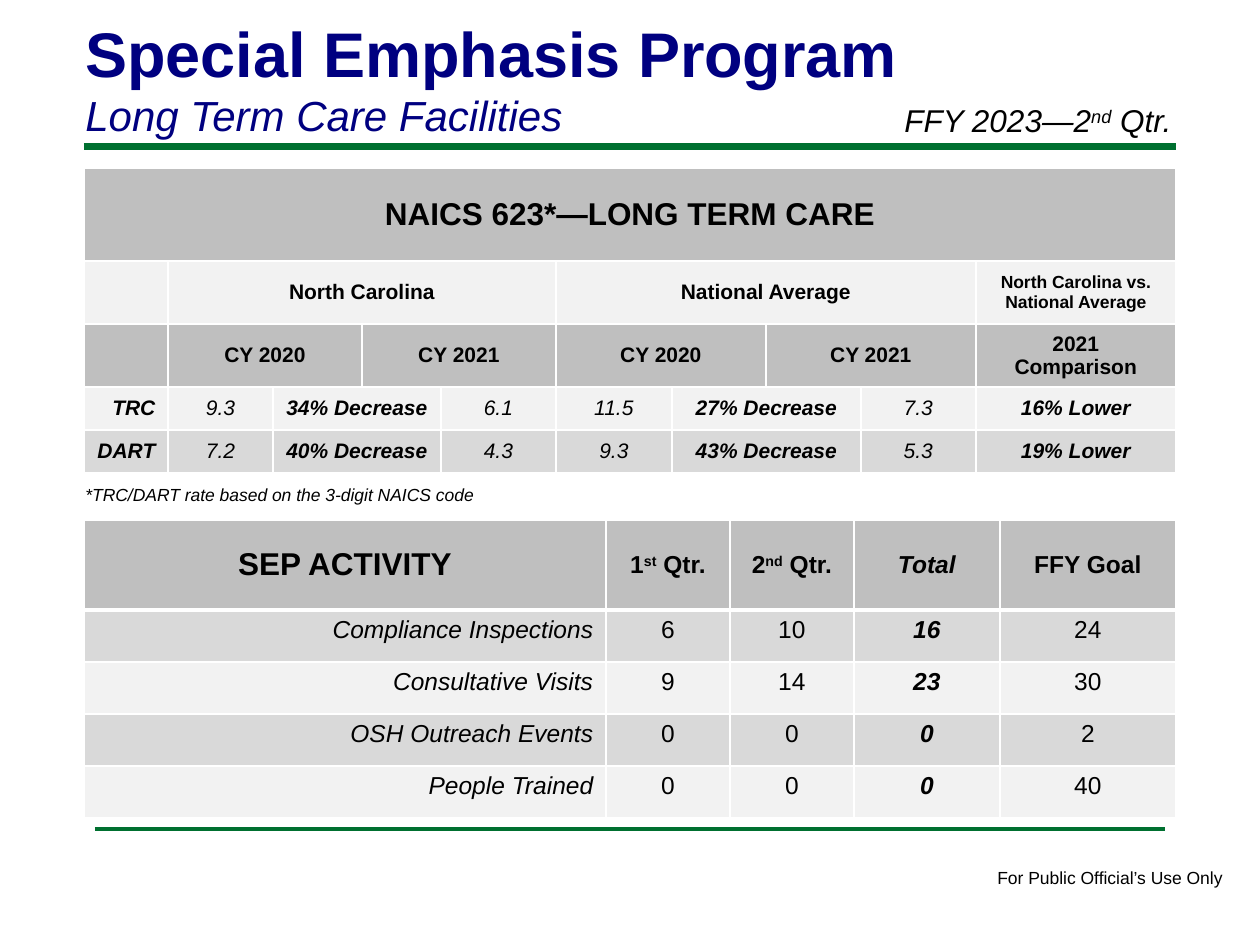
from dataclasses import dataclass

from lxml import etree
from pptx import Presentation
from pptx import util as u
from pptx.dml.color import RGBColor
from pptx.enum import shapes, text
from pptx.oxml.ns import qn

FONT = "Arial"
PX_PER_INCH = 126
COLORS = {
    "navy": "000080", "green": "007030", "black": "000000", "white": "FFFFFF",
    "header": "BFBFBF", "dark": "D9D9D9", "light": "F2F2F2",
}
LEFT, CENTER, RIGHT = text.PP_ALIGN.LEFT, text.PP_ALIGN.CENTER, text.PP_ALIGN.RIGHT


@dataclass(frozen=True)
class Line:
    """One paragraph; words between carets are superscript."""
    words: str
    size: int
    bold: bool = False
    italic: bool = False
    color: str = "black"
    align: int = LEFT


@dataclass(frozen=True)
class Box:
    left: int
    top: int
    width: int
    height: int
    lines: tuple[Line, ...]
    wrap: bool = True


@dataclass(frozen=True)
class Rule:
    left: int
    right: int
    y: int
    weight: int


@dataclass(frozen=True)
class Cell:
    line: Line
    span: int = 1


@dataclass(frozen=True)
class Row:
    height: int
    fill: str
    cells: tuple[Cell, ...]
    middle: bool = True
    top: int = 1
    bottom: int = 1


@dataclass(frozen=True)
class Grid:
    left: int
    top: int
    columns: tuple[int, ...]
    rows: tuple[Row, ...]


def px(length: int) -> int:
    return round(length * u.Inches(1) / PX_PER_INCH)


def rgb(name: str) -> RGBColor:
    return RGBColor.from_string(COLORS[name])


def write(para, line: Line) -> None:
    for index, words in enumerate(line.words.split("^")):
        if words:
            span = para.add_run()
            span.text = words
            if index % 2:
                span._r.get_or_add_rPr().set("baseline", "30000")
    para.alignment = line.align
    font = para.font
    font.name, font.size = FONT, u.Pt(line.size)
    font.bold, font.italic = line.bold, line.italic
    font.color.rgb = rgb(line.color)


def draw_rule(page, rule: Rule) -> None:
    connector = page.shapes.add_connector(
        shapes.MSO_CONNECTOR.STRAIGHT,
        px(rule.left), px(rule.y), px(rule.right), px(rule.y))
    connector.line.color.rgb = rgb("green")
    connector.line.width = u.Pt(rule.weight)
    etree.SubElement(connector._element.spPr, qn("a:effectLst"))


def draw_box(page, box: Box) -> None:
    frame = page.shapes.add_textbox(
        px(box.left), px(box.top), px(box.width), px(box.height)).text_frame
    frame.word_wrap = box.wrap
    frame.auto_size = text.MSO_AUTO_SIZE.SHAPE_TO_FIT_TEXT
    for index, line in enumerate(box.lines):
        write(frame.add_paragraph() if index else frame.paragraphs[0], line)


def style_cell(cell, row: Row) -> None:
    properties = cell._tc.get_or_add_tcPr()
    weights = {"lnL": 1, "lnR": 1, "lnT": row.top, "lnB": row.bottom}
    for side, weight in weights.items():
        border = etree.SubElement(properties, qn(f"a:{side}"), w=str(u.Pt(weight)))
        fill = etree.SubElement(border, qn("a:solidFill"))
        etree.SubElement(fill, qn("a:srgbClr"), val=COLORS["white"])
    cell.fill.solid()
    cell.fill.fore_color.rgb = rgb(row.fill)
    if row.middle:
        cell.vertical_anchor = text.MSO_ANCHOR.MIDDLE


def draw_grid(page, grid: Grid) -> None:
    table = page.shapes.add_table(
        len(grid.rows), len(grid.columns), px(grid.left), px(grid.top),
        px(sum(grid.columns)), px(sum(row.height for row in grid.rows))).table
    for column, width in zip(table.columns, grid.columns):
        column.width = px(width)
    for r, row in enumerate(grid.rows):
        table.rows[r].height = px(row.height)
        for cell in table.rows[r].cells:
            style_cell(cell, row)
        c = 0
        for item in row.cells:
            cell = table.cell(r, c)
            if item.span > 1:
                cell.merge(table.cell(r, c + item.span - 1))
            write(cell.text_frame.paragraphs[0], item.line)
            c += item.span


def heading(words: str, size: int = 12, span: int = 1, italic: bool = False) -> Cell:
    return Cell(Line(words, size, bold=True, italic=italic, align=CENTER), span)


def rate_row(fill: str, name: str, *values: str) -> Row:
    """Rates are plain; changes and the comparison are bold."""
    spans = (1, 2, 1, 1, 2, 1, 1)
    bold = (False, True, False, False, True, False, True)
    cells = [Cell(Line(name, 12, True, True, align=RIGHT))]
    cells += [Cell(Line(value, 12, strong, True, align=CENTER), span)
              for value, span, strong in zip(values, spans, bold)]
    return Row(43, fill, tuple(cells))


def activity_row(index: int, name: str, *values: int) -> Row:
    cells = [Cell(Line(name, 14, italic=True, align=RIGHT))]
    for column, value in enumerate(values):
        total = column == 2
        cells.append(Cell(Line(str(value), 14, total, total, align=CENTER)))
    return Row(52, ("dark", "light")[index % 2], tuple(cells), middle=False,
               top=1 if index else 3)


RULES = (Rule(84, 1176, 147, 4), Rule(95, 1165, 829, 2))

BOXES = (
    Box(985, 861, 253, 34, (Line("For Public Official’s Use Only", 10),), wrap=False),
    Box(73, 8, 1040, 140, (
        Line("Special Emphasis Program", 36, bold=True, color="navy"),
        Line("Long Term Care Facilities", 24, italic=True, color="navy"))),
    Box(73, 478, 426, 34, (
        Line("*TRC/DART rate based on the 3-digit NAICS code", 10, italic=True),),
        wrap=False),
    Box(892, 95, 315, 50, (Line("FFY 2023—2^nd^ Qtr.", 18, italic=True),)),
)

ACTIVITIES = (
    ("Compliance Inspections", 6, 10, 16, 24),
    ("Consultative Visits", 9, 14, 23, 30),
    ("OSH Outreach Events", 0, 0, 0, 2),
    ("People Trained", 0, 0, 0, 40),
)

ACTIVITY_GRID = Grid(84, 520, (522, 124, 124, 146, 176), (
    Row(90, "header", (
        heading("SEP ACTIVITY", 18), heading("1^st^ Qtr.", 14),
        heading("2^nd^ Qtr.", 14), heading("Total", 14, italic=True),
        heading("FFY Goal", 14)), bottom=3),
    *(activity_row(index, *entry) for index, entry in enumerate(ACTIVITIES)),
))

RATE_GRID = Grid(84, 168, (84, 105, 89, 79, 115, 116, 94, 95, 115, 200), (
    Row(93, "header", (heading("NAICS 623*—LONG TERM CARE", 18, span=10),)),
    Row(63, "light", (
        heading(""), heading("North Carolina", span=4),
        heading("National Average", span=4),
        heading("North Carolina vs. National Average", 10))),
    Row(58, "header", (
        heading(""),
        *(heading(f"CY {year}", span=2) for year in (2020, 2021) * 2),
        heading("2021 Comparison"))),
    rate_row("light", "TRC", "9.3", "34% Decrease", "6.1",
             "11.5", "27% Decrease", "7.3", "16% Lower"),
    rate_row("dark", "DART", "7.2", "40% Decrease", "4.3",
             "9.3", "43% Decrease", "5.3", "19% Lower"),
))


def main() -> None:
    deck = Presentation()
    deck.slide_width, deck.slide_height = u.Inches(10), u.Inches(7.5)
    page = deck.slides.add_slide(deck.slide_layouts[6])
    # Green rules under the title and above the footer
    for rule in RULES:
        draw_rule(page, rule)
    # Title, period, footnote and footer
    for box in BOXES:
        draw_box(page, box)
    # Activity and rate tables
    for grid in (ACTIVITY_GRID, RATE_GRID):
        draw_grid(page, grid)
    deck.save("out.pptx")


if __name__ == "__main__":
    main()
